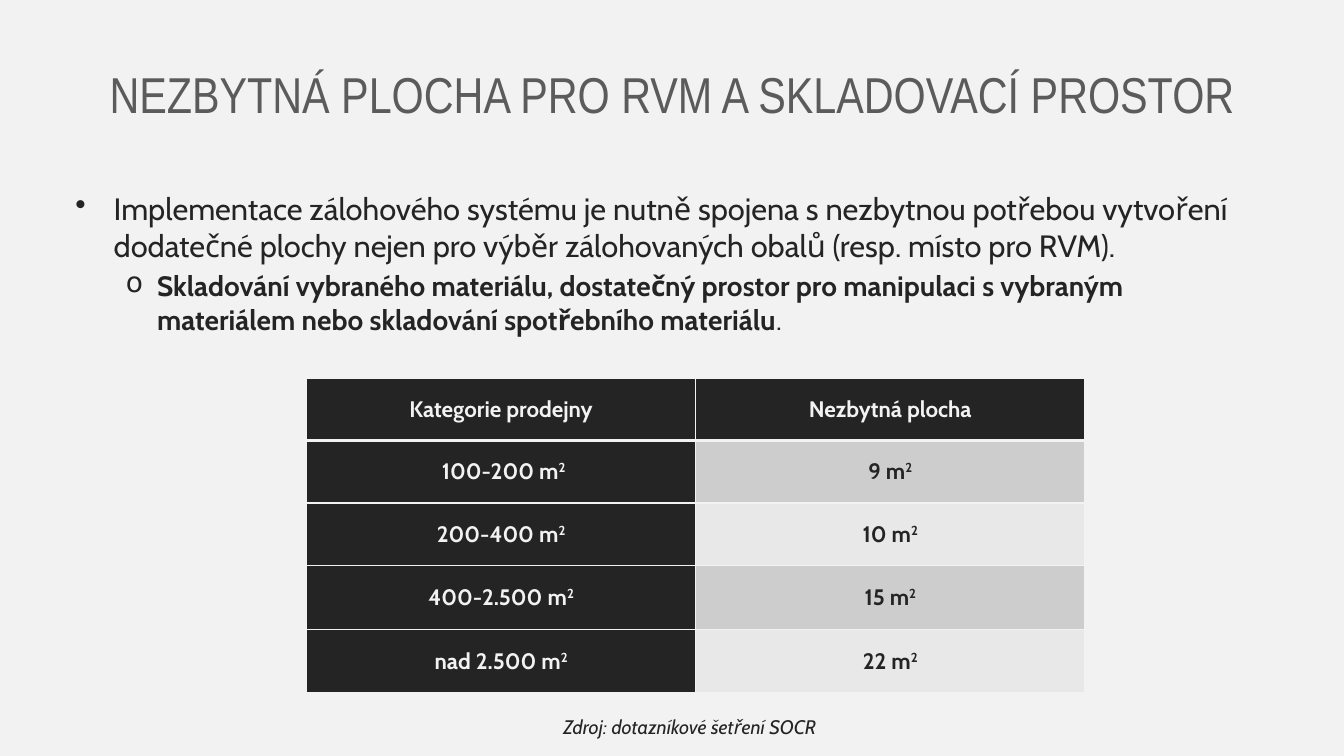
from lxml import etree
from pptx import Presentation
from pptx.dml.color import RGBColor
from pptx.enum.text import MSO_ANCHOR, PP_ALIGN
from pptx.oxml.ns import qn
from pptx.util import Inches, Pt

CENTER = PP_ALIGN.CENTER
MIDDLE = MSO_ANCHOR.MIDDLE
TITLE_ONLY = 5
COLORS = {
    "paper": "F2F2F2",
    "title": "5B5B5B",
    "ink": "242424",
    "dark_band": "CDCDCD",
    "light_band": "E8E8E8",
}
TITLE_FONT = "Arial Narrow"
BODY_FONT = "Cabin"

TITLE = "NEZBYTNÁ PLOCHA PRO RVM A SKLADOVACÍ PROSTOR"
# (indent, hanging, bullet, size, space before, [(text, bold), ...])
POINTS = [
    (0.38, 0.38, "•", 22, 0, [
        ("Implementace zálohového systému je nutně spojena s nezbytnou potřebou "
         "vytvoření dodatečné plochy nejen pro výběr zálohovaných obalů "
         "(resp. místo pro RVM).", False)]),
    (0.81, 0.31, "o", 20, 4, [
        ("Skladování vybraného materiálu, dostatečný prostor pro manipulaci "
         "s vybraným materiálem nebo skladování spotřebního materiálu", True),
        (".", False)]),
]
HEADINGS = ("Kategorie prodejny", "Nezbytná plocha")
AREAS = [
    (" 100-200 m", "9 m"),
    ("200-400 m", "10 m"),
    ("400-2.500 m", "15 m"),
    ("nad 2.500 m", "22 m"),
]
ROW_HEIGHTS = (0.62, 0.62, 0.62, 0.64, 0.62)
SOURCE = "Zdroj: dotazníkové šetření SOCR"


def rgb(name):
    return RGBColor.from_string(COLORS[name])


def add_run(paragraph, text, size, color="ink", face=BODY_FONT, bold=False, italic=False):
    run = paragraph.add_run()
    run.text = text
    font = run.font
    font.name, font.size, font.bold, font.italic = face, Pt(size), bold, italic
    font.color.rgb = rgb(color)
    return run


def set_bullet(paragraph, bullet, indent, hanging):
    props = paragraph._p.get_or_add_pPr()
    props.set("marL", str(Inches(indent)))
    props.set("indent", str(-Inches(hanging)))
    etree.SubElement(props, qn("a:buChar")).set("char", bullet)


def set_borders(cell, top, bottom):
    """Draw paper-coloured borders; they must precede the cell's fill."""
    props = cell._tc.get_or_add_tcPr()
    for side, width in (("L", 1), ("R", 1), ("T", top), ("B", bottom)):
        line = etree.SubElement(props, qn(f"a:ln{side}"), w=str(Pt(width)))
        fill = etree.SubElement(line, qn("a:solidFill"))
        etree.SubElement(fill, qn("a:srgbClr"), val=COLORS["paper"])


def add_title(slide, left, top, width, height):
    title = slide.shapes.title
    title.left, title.top = Inches(left), Inches(top)
    title.width, title.height = Inches(width), Inches(height)
    frame = title.text_frame
    frame.word_wrap = True
    frame.vertical_anchor = MIDDLE
    paragraph = frame.paragraphs[0]
    paragraph.alignment = CENTER
    add_run(paragraph, TITLE, 36, "title", TITLE_FONT)


def add_points(slide, left, top, width, height):
    box = slide.shapes.add_textbox(Inches(left), Inches(top), Inches(width), Inches(height))
    frame = box.text_frame
    frame.word_wrap = True
    for index, (indent, hanging, bullet, size, before, runs) in enumerate(POINTS):
        paragraph = frame.add_paragraph() if index else frame.paragraphs[0]
        paragraph.level = index
        set_bullet(paragraph, bullet, indent, hanging)
        paragraph.space_before = Pt(before)
        for text, bold in runs:
            add_run(paragraph, text, size, bold=bold)


def fill_cell(cell, text, unit_power, fill, color, top, bottom):
    cell.margin_left = cell.margin_right = Inches(0.07)
    cell.margin_top = cell.margin_bottom = 0
    cell.vertical_anchor = MIDDLE
    set_borders(cell, top, bottom)
    cell.fill.solid()
    cell.fill.fore_color.rgb = rgb(fill)
    paragraph = cell.text_frame.paragraphs[0]
    paragraph.alignment = CENTER
    add_run(paragraph, text, 16, color, bold=True)
    if unit_power:
        power = add_run(paragraph, unit_power, 16, color, bold=True)
        power._r.get_or_add_rPr().set("baseline", "30000")


def add_area_table(slide, left, top, width, height):
    rows = [HEADINGS] + AREAS
    table = slide.shapes.add_table(len(rows), len(HEADINGS), Inches(left), Inches(top),
                                   Inches(width), Inches(height)).table
    for column in table.columns:
        column.width = Inches(width / len(HEADINGS))
    for r, texts in enumerate(rows):
        table.rows[r].height = Inches(ROW_HEIGHTS[r])
        band = "dark_band" if r % 2 else "light_band"
        for c, text in enumerate(texts):
            dark = r == 0 or c == 0
            fill_cell(table.cell(r, c), text, "2" if r else "",
                      "ink" if dark else band, "paper" if dark else "ink",
                      top=3 if r == 1 else 1, bottom=3 if r == 0 else 1)


def add_source(slide, left, top, width, height):
    box = slide.shapes.add_textbox(Inches(left), Inches(top), Inches(width), Inches(height))
    box.text_frame.word_wrap = True
    add_run(box.text_frame.paragraphs[0], SOURCE, 14, italic=True)


def main():
    deck = Presentation()
    deck.slide_width, deck.slide_height = Inches(13.33), Inches(7.5)
    slide = deck.slides.add_slide(deck.slide_layouts[TITLE_ONLY])
    slide.background.fill.solid()
    slide.background.fill.fore_color.rgb = rgb("paper")

    add_title(slide, 0.67, 0.3, 12, 1.25)
    add_area_table(slide, 3.04, 3.75, 7.72, sum(ROW_HEIGHTS))
    add_points(slide, 0.65, 1.83, 12, 1.76)
    add_source(slide, 5.49, 7.04, 2.84, 0.34)
    deck.save("out.pptx")


if __name__ == "__main__":
    main()
